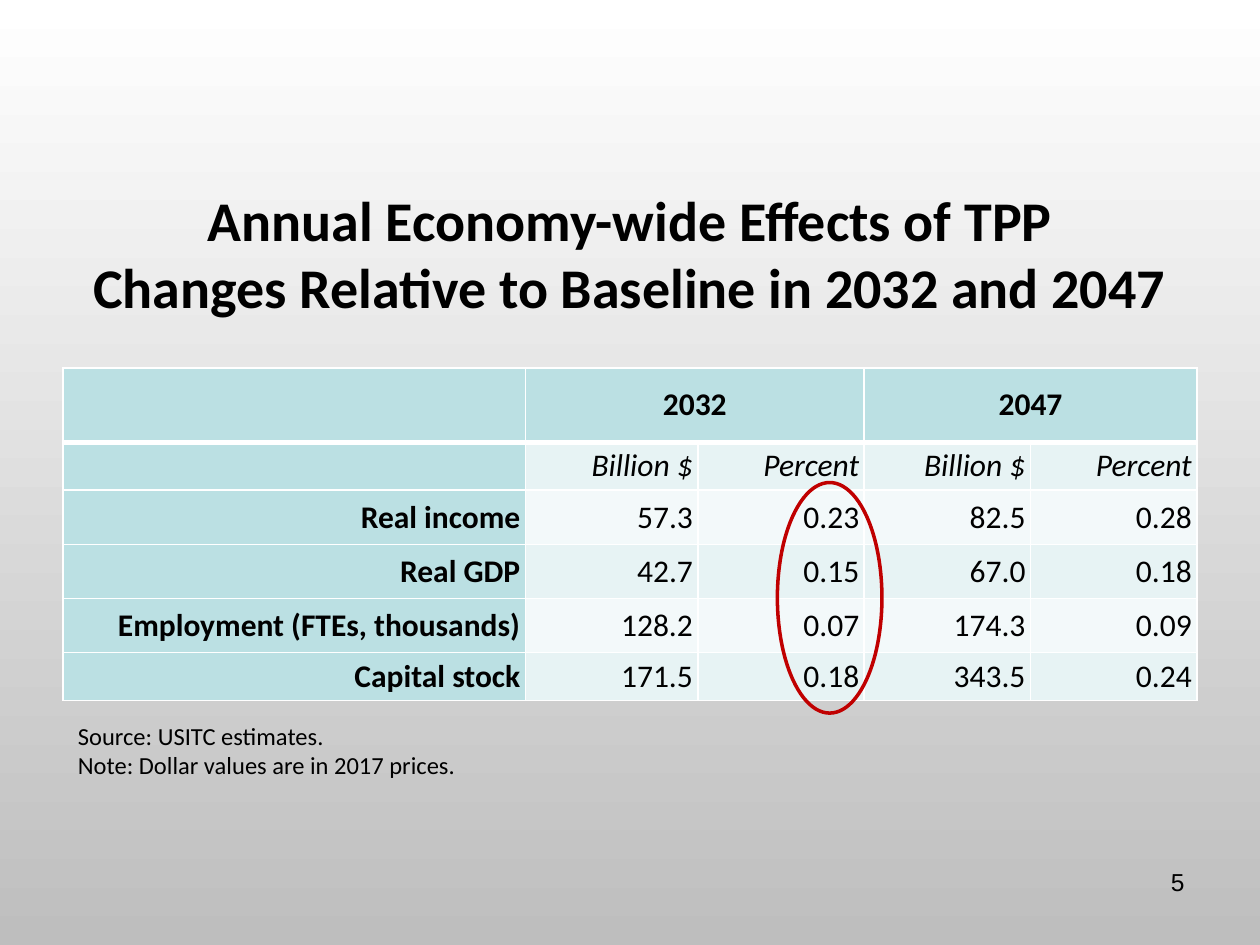
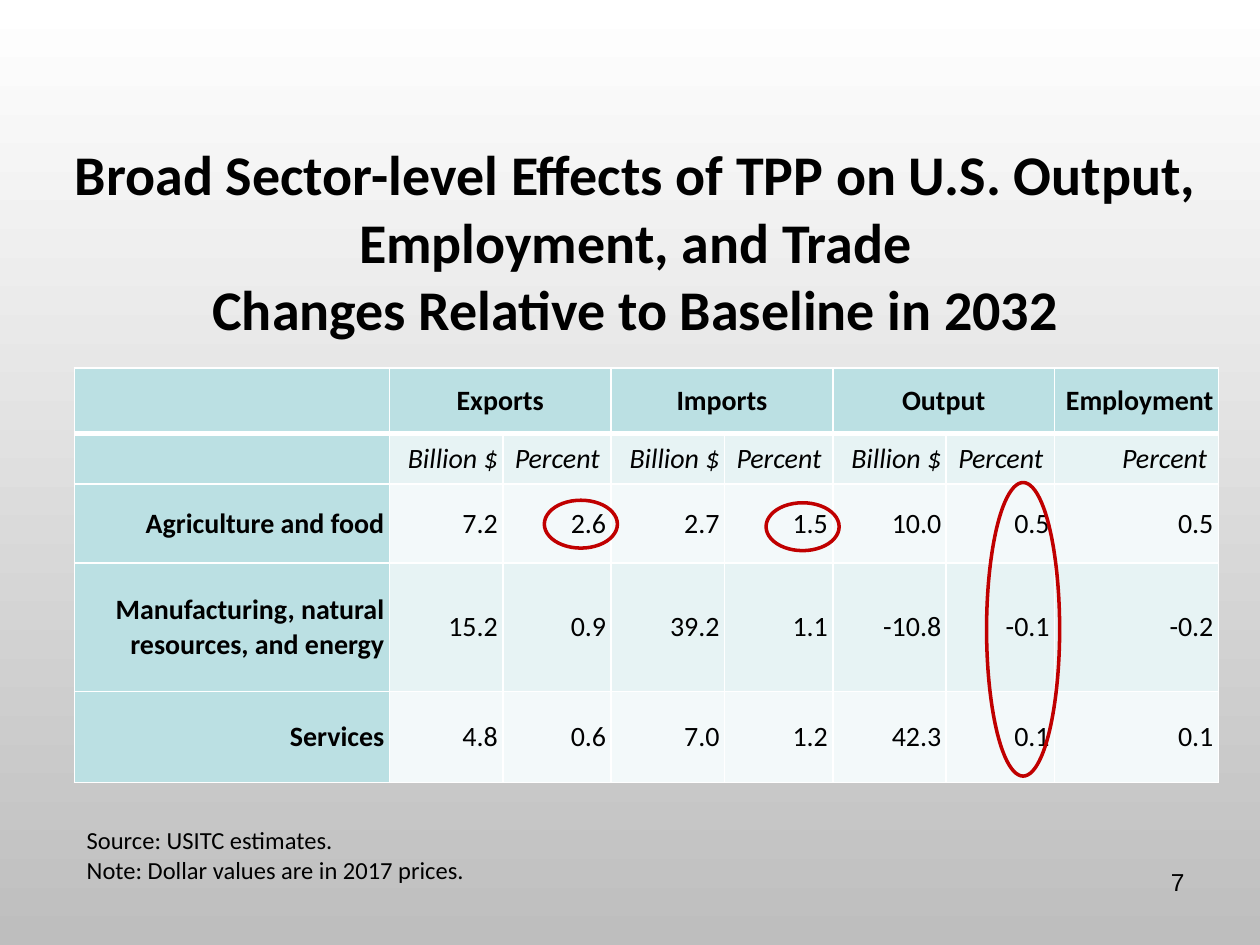
import pptx
import pptx.util
import pptx.dml.color
import pptx.enum.shapes
import pptx.enum.text
import pptx.oxml
from lxml import etree
from pptx.util import Inches

ALIGN = pptx.enum.text.PP_ALIGN
MIDDLE = pptx.enum.text.MSO_ANCHOR.MIDDLE
COLORS = {
    "text": "000000",
    "header": "BBE0E3",
    "band_dark": "E7F3F4",
    "band_light": "F3F9FA",
    "border": "FFFFFF",
    "highlight": "C00000",
    "background_top": "FFFFFF",
    "background_bottom": "BEBEBE",
}
BORDER_SIDES = ("L", "R", "T", "B")
TABLE_TOP = 2.92
SOURCE_NOTE = ("Source: USITC estimates.", "Note: Dollar values are in 2017 prices.")


def rgb(name):
    return pptx.dml.color.RGBColor.from_string(COLORS[name])


class Deck:
    """Holds the presentation, its style and the slide being built."""

    def __init__(self):
        self.presentation = pptx.Presentation()
        self.presentation.slide_width = Inches(10)
        self.presentation.slide_height = Inches(7.5)
        self.slide = None

    def add_slide(self, title, title_box, number):
        self.slide = self.presentation.slides.add_slide(self.presentation.slide_layouts[5])
        fill = self.slide.background.fill
        fill.gradient()
        fill.gradient_angle = 270
        for stop, name in zip(fill.gradient_stops, ("background_top", "background_bottom")):
            stop.color.rgb = rgb(name)
        self.title(title, title_box)
        self.text([number], (7.17, 6.83, 2.33, 0.52), font="Arial", align=ALIGN.RIGHT)

    def format(self, paragraph, size, font="Calibri", align=ALIGN.LEFT, bold=False, italic=False):
        paragraph.alignment = align
        paragraph.font.name = font
        paragraph.font.size = pptx.util.Pt(size)
        paragraph.font.bold = bold
        paragraph.font.italic = italic
        paragraph.font.color.rgb = rgb("text")

    def title(self, text, box):
        heading = self.slide.shapes.title
        heading.left, heading.top, heading.width, heading.height = map(Inches, box)
        frame = heading.text_frame
        frame.text = text
        frame.vertical_anchor = MIDDLE
        self.format(frame.paragraphs[0], 32, align=ALIGN.CENTER, bold=True)

    def text(self, lines, box, wrap=True, anchor=pptx.enum.text.MSO_ANCHOR.TOP, **style):
        frame = self.slide.shapes.add_textbox(*map(Inches, box)).text_frame
        frame.word_wrap = wrap
        frame.vertical_anchor = anchor
        frame.text = "\n".join(lines)
        for paragraph in frame.paragraphs:
            self.format(paragraph, 14, **style)

    def source_note(self, left, top):
        self.text(SOURCE_NOTE, (left, top, 3.23, 0.57), wrap=False, anchor=MIDDLE)

    def highlight(self, *box):
        ring = self.slide.shapes.add_shape(
            pptx.enum.shapes.MSO_SHAPE.OVAL, *map(Inches, box))
        ring.shadow.inherit = False
        ring.fill.background()
        ring.line.color.rgb = rgb("highlight")
        ring.line.width = pptx.util.Pt(2)

    def borders(self, cell, row):
        """White grid, with a thick rule between the first two rows."""
        properties = cell._tc.get_or_add_tcPr()
        for side in BORDER_SIDES:
            points = 3 if (row, side) in ((0, "B"), (1, "T")) else 1
            line = etree.SubElement(properties, pptx.oxml.ns.qn(f"a:ln{side}"),
                                    w=str(pptx.util.Pt(points)))
            fill = etree.SubElement(line, pptx.oxml.ns.qn("a:solidFill"))
            etree.SubElement(fill, pptx.oxml.ns.qn("a:srgbClr"), val=COLORS["border"])

    def table(self, left, column_widths, row_heights, rows, size):
        """Draw rows; None in the header row joins a cell to the one before it."""
        table = self.slide.shapes.add_table(
            len(rows), len(column_widths), Inches(left), Inches(TABLE_TOP),
            Inches(sum(column_widths)), Inches(sum(row_heights))).table
        table.first_row = table.horz_banding = False
        for column, width in zip(table.columns, column_widths):
            column.width = Inches(width)
        for row, height in zip(table.rows, row_heights):
            row.height = Inches(height)
        for r, values in enumerate(rows):
            for c, value in enumerate(values):
                self.table_cell(table.cell(r, c), r, c, value or "", size)
        for c, group in enumerate(rows[0]):
            if group is None:
                table.cell(0, c - 1).merge(table.cell(0, c))
                table.cell(0, c - 1).text_frame.paragraphs[0].alignment = ALIGN.CENTER

    def table_cell(self, cell, row, column, value, size):
        is_header = row == 0 or column == 0
        cell.margin_left = cell.margin_right = Inches(0.04)
        cell.margin_top = cell.margin_bottom = 0
        cell.vertical_anchor = MIDDLE
        self.borders(cell, row)
        cell.fill.solid()
        band = "band_dark" if row % 2 else "band_light"
        cell.fill.fore_color.rgb = rgb("header" if is_header else band)
        cell.text = value
        self.format(cell.text_frame.paragraphs[0], size, align=ALIGN.RIGHT,
                    bold=is_header, italic=row == 1)


def economy_wide_slide(deck):
    deck.add_slide("Annual Economy-wide Effects of TPP\v"
                   "Changes Relative to Baseline in 2032 and 2047",
                   (0.5, 1.42, 9, 1.17), "5")
    effects = [
        ["", "2032", None, "2047", None],
        [""] + ["Billion $", "Percent"] * 2,
        ["Real income", "57.3", "0.23", "82.5", "0.28"],
        ["Real GDP", "42.7", "0.15", "67.0", "0.18"],
        ["Employment (FTEs, thousands)", "128.2", "0.07", "174.3", "0.09"],
        ["Capital stock", "171.5", "0.18", "343.5", "0.24"],
    ]
    deck.table(0.5, [3.67, 1.37, 1.32, 1.32, 1.32],
               [0.59, 0.38, 0.43, 0.43, 0.43, 0.38], effects, 18)
    deck.source_note(0.52, 5.67)
    deck.highlight(6.17, 3.83, 0.83, 1.83)


def sector_slide(deck):
    deck.add_slide("Broad Sector-level Effects of TPP on U.S. Output, "
                   "Employment, and Trade\vChanges Relative to Baseline in 2032",
                   (0.42, 1, 9.25, 1.82), "7")
    effects = [
        ["", "Exports", None, "Imports", None, "Output", None, "Employment"],
        [""] + ["Billion $", "Percent "] * 3 + ["Percent "],
        ["Agriculture and food", "7.2", "2.6", "2.7", "1.5", "10.0", "0.5", "0.5"],
        ["Manufacturing, natural resources, and energy",
         "15.2", "0.9", "39.2", "1.1", "-10.8", "-0.1", "-0.2"],
        ["Services", "4.8", "0.6", "7.0", "1.2", "42.3", "0.1", "0.1"],
    ]
    deck.table(0.59, [2.5] + [0.9, 0.86] * 3 + [1.3],
               [0.52, 0.4, 0.63, 1.02, 0.72], effects, 16)
    deck.source_note(0.59, 6.5)
    deck.highlight(4.32, 3.97, 0.58, 0.38)
    deck.highlight(6.08, 3.99, 0.58, 0.38)
    deck.highlight(7.83, 3.83, 0.58, 2.33)


def main():
    deck = Deck()
    economy_wide_slide(deck)
    sector_slide(deck)
    deck.presentation.save("out.pptx")


if __name__ == "__main__":
    main()
